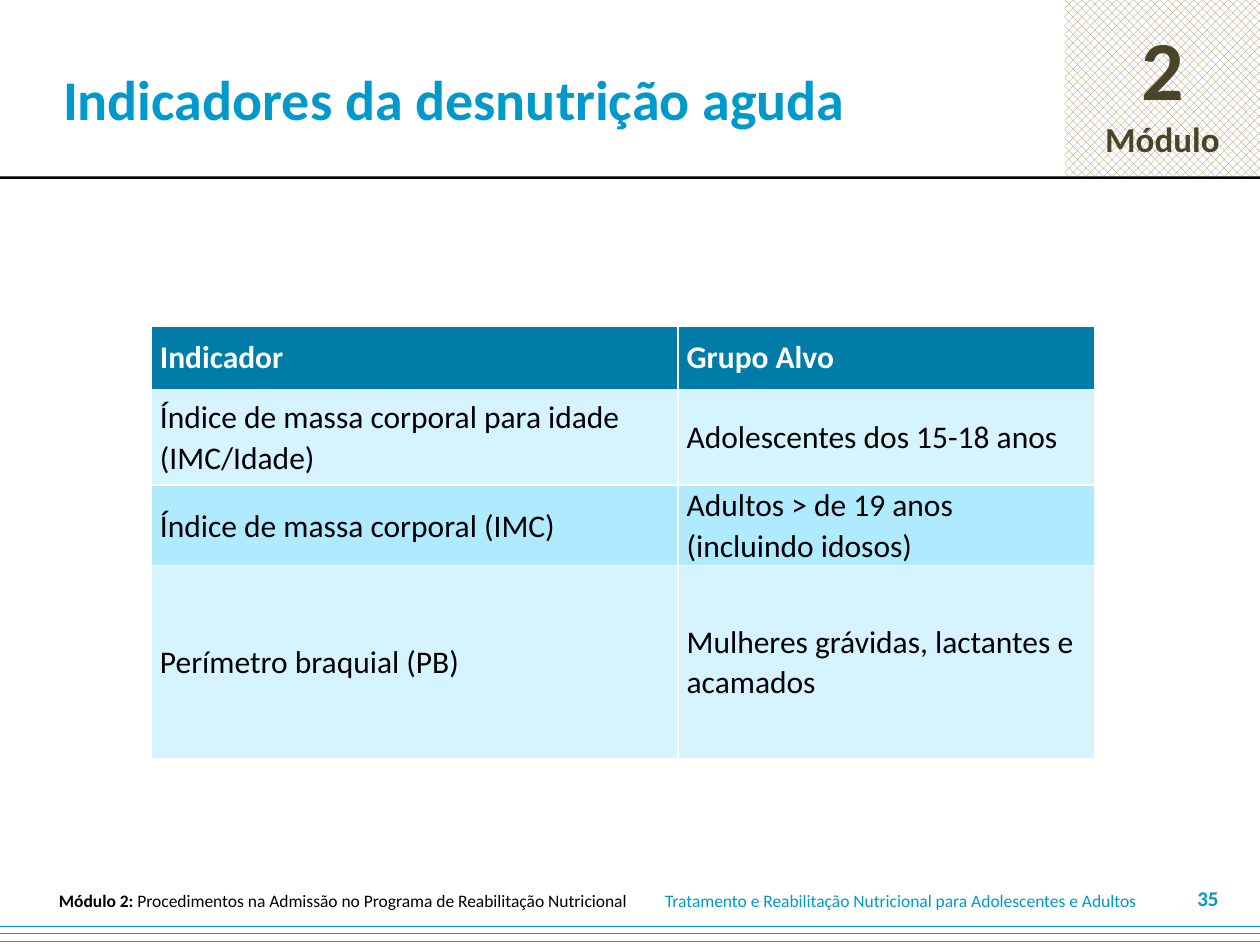
from lxml.etree import SubElement
from pptx import Presentation
from pptx.dml.color import RGBColor
from pptx.enum.dml import MSO_PATTERN
from pptx.enum.shapes import MSO_SHAPE
from pptx.enum.text import MSO_ANCHOR as ANCHOR, PP_ALIGN as ALIGN
from pptx.oxml.ns import qn
from pptx.util import Inches, Pt

COLORS = {
    "blue": "0099CC", "header": "007CA8", "light": "D5F4FF", "mid": "AFEAFF",
    "olive": "948A54", "dark": "4A452A", "black": "000000", "white": "FFFFFF",
}
FONT = "Calibri"
COLUMN_WIDTHS = [4.18, 3.31]
ROW_HEIGHTS = [0.5, 0.76, 0.64, 1.53]
INDICATORS = [
    ("Indicador", "Grupo Alvo"),
    ("Índice de massa corporal para idade (IMC/Idade)", "Adolescentes dos 15-18 anos"),
    ("Índice de massa corporal (IMC)", "Adultos > de 19 anos (incluindo idosos)"),
    ("Perímetro braquial (PB)", "Mulheres grávidas, lactantes e acamados"),
]


def rgb(name):
    return RGBColor.from_string(COLORS[name])


def style(paragraph, size, color, bold=None, align=ALIGN.LEFT):
    font = paragraph.font
    font.name, font.size, font.bold = FONT, Pt(size), bold
    font.color.rgb = rgb(color)
    paragraph.alignment = align


def add_band(slide, box, color, pattern=None):
    band = slide.shapes.add_shape(MSO_SHAPE.RECTANGLE, *map(Inches, box))
    band.shadow.inherit = False
    band.line.fill.background()
    if pattern is None:
        band.fill.solid()
    else:
        band.fill.patterned()
        band.fill.pattern = pattern
        band.fill.back_color.rgb = rgb("white")
    band.fill.fore_color.rgb = rgb(color)
    return band


def add_module_badge(slide):
    badge = add_band(slide, (8.45, 0, 1.55, 1.4), "olive", MSO_PATTERN.PERCENT_50)
    frame = badge.text_frame
    frame.vertical_anchor = ANCHOR.MIDDLE
    frame.text = "2\nMódulo"
    for paragraph, size in zip(frame.paragraphs, (48, 20)):
        style(paragraph, size, "dark", True, ALIGN.CENTER)


def add_title(slide, text):
    title = slide.shapes.title
    title.left, title.top, title.width, title.height = map(Inches, (0, 0, 8.58, 1.55))
    frame = title.text_frame
    frame.text = text
    frame.margin_left = Inches(0.5)
    frame.vertical_anchor = ANCHOR.MIDDLE
    style(frame.paragraphs[0], 32, "blue", True)


def add_label(slide, box, text, size, color, bold=None, align=ALIGN.LEFT, wrap=False, lead=""):
    frame = slide.shapes.add_textbox(*map(Inches, box)).text_frame
    frame.word_wrap = wrap
    frame.vertical_anchor = ANCHOR.MIDDLE
    paragraph = frame.paragraphs[0]
    if lead:
        lead_run = paragraph.add_run()
        lead_run.text = lead
        lead_run.font.bold = True
    paragraph.add_run().text = text
    style(paragraph, size, color, bold, align)


def add_borders(cell):
    properties = cell._tc.get_or_add_tcPr()
    for position, side in enumerate(("lnL", "lnR", "lnT", "lnB")):
        line = SubElement(properties, qn(f"a:{side}"), w=str(Pt(1)))
        fill = SubElement(line, qn("a:solidFill"))
        SubElement(fill, qn("a:srgbClr"), val=COLORS["white"])
        properties.insert(position, line)  # borders come before the fill


def fill_cell(cell, text, row):
    cell.text = text
    cell.vertical_anchor = ANCHOR.MIDDLE
    cell.margin_left = cell.margin_right = Inches(0.07)
    cell.margin_top = cell.margin_bottom = 0
    cell.fill.solid()
    paragraph = cell.text_frame.paragraphs[0]
    if row == 0:
        cell.fill.fore_color.rgb = rgb("header")
        style(paragraph, 18, "white", True, ALIGN.JUSTIFY)
        paragraph.space_before = paragraph.space_after = Pt(6)
    else:
        cell.fill.fore_color.rgb = rgb("light" if row % 2 else "mid")
        style(paragraph, 18, "black", False)
        paragraph.line_spacing = 1.05
    add_borders(cell)


def add_indicator_table(slide):
    size = (sum(COLUMN_WIDTHS), sum(ROW_HEIGHTS))
    table = slide.shapes.add_table(
        len(ROW_HEIGHTS), len(COLUMN_WIDTHS), *map(Inches, (1.2, 2.59, *size))).table
    for column, width in zip(table.columns, COLUMN_WIDTHS):
        column.width = Inches(width)
    for row, (height, texts) in enumerate(zip(ROW_HEIGHTS, INDICATORS)):
        table.rows[row].height = Inches(height)
        for column, text in enumerate(texts):
            fill_cell(table.cell(row, column), text, row)


def main():
    deck = Presentation()
    deck.slide_width, deck.slide_height = Inches(10), Inches(7.5)
    slide = deck.slides.add_slide(deck.slide_layouts[5])

    # Header
    add_module_badge(slide)
    add_band(slide, (-0.02, 1.4, 10.02, 0.02), "black")
    add_title(slide, "Indicadores da desnutrição aguda")

    # Footer
    add_band(slide, (0, 7.29, 10, 0.21), "blue", MSO_PATTERN.DASHED_HORIZONTAL)
    add_label(slide, (5.18, 7.05, 4.05, 0.2),
              "Tratamento e Reabilitação Nutricional para Adolescentes e Adultos", 10, "blue")
    add_label(slide, (0.29, 7.05, 4.86, 0.2),
              "Procedimentos na Admissão no Programa de Reabilitação Nutricional",
              10, "black", align=ALIGN.CENTER, lead="Módulo 2: ")
    add_label(slide, (9.27, 7, 0.5, 0.25), "35", 12, "blue", True, ALIGN.RIGHT, wrap=True)

    # Indicators and their target groups
    add_indicator_table(slide)
    deck.save("out.pptx")


if __name__ == "__main__":
    main()
